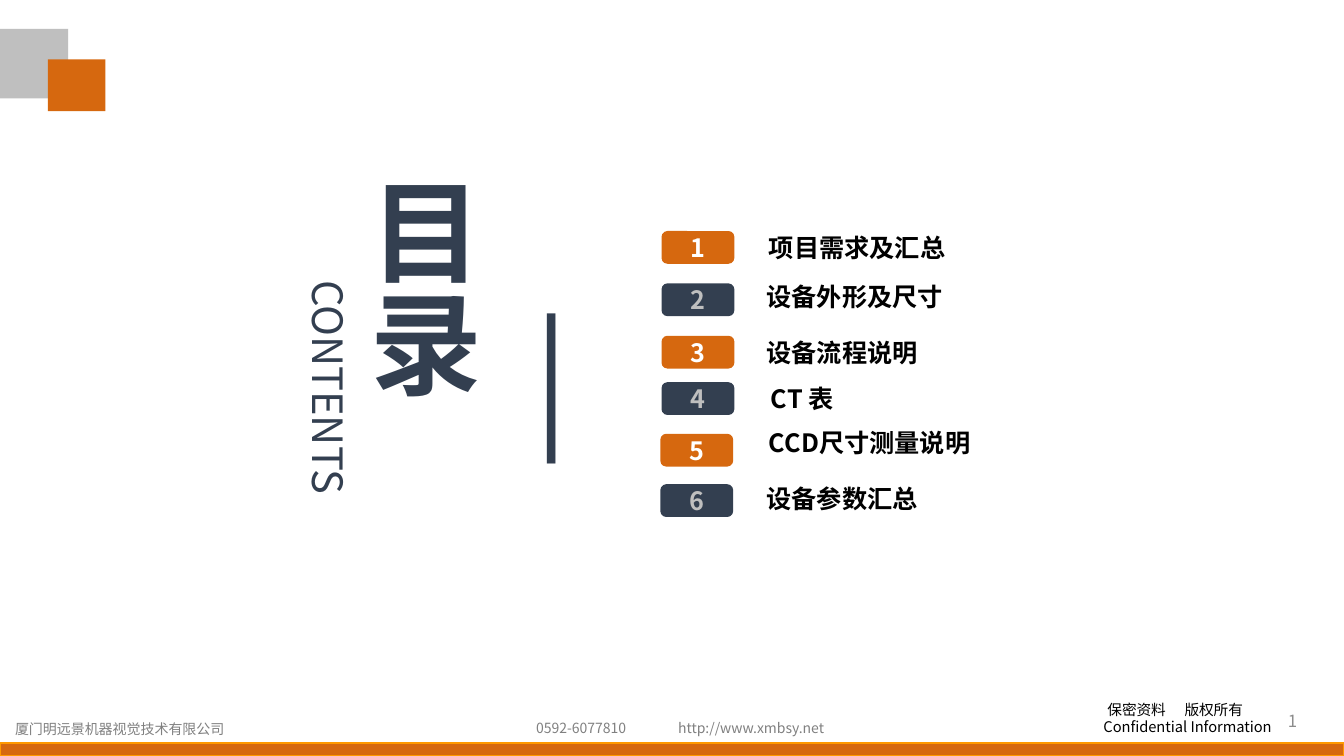
from lxml import etree
from pptx import Presentation
from pptx import util as u
from pptx.dml.color import RGBColor
from pptx.enum import shapes, text
from pptx.oxml.ns import qn

FONT = "Noto Sans CJK SC"
HUES = {"rust": "D6680F", "gold": "FF9900", "navy": "333F50", "ash": "BFBFBF",
        "gray": "808080", "mist": "8C8C8C", "black": "000000", "white": "FFFFFF"}
KIND = shapes.MSO_SHAPE
SIDE = text.PP_ALIGN

deck = Presentation()
deck.slide_width, deck.slide_height = u.Cm(33.87), u.Cm(19.05)
slide = deck.slides.add_slide(deck.slide_layouts[6])


def draw(kind, spot, fill, edge=None):
    form = slide.shapes.add_shape(kind, *map(u.Cm, spot))
    form.shadow.inherit = False
    form.fill.solid()
    form.fill.fore_color.rgb = RGBColor.from_string(HUES[fill])
    if edge:
        form.line.color.rgb = RGBColor.from_string(HUES[edge])
        form.line.width = u.Pt(1)
    else:
        form.line.fill.background()
    return form


def write(host, lines, size, hue, bold=False, side=SIDE.LEFT):
    if isinstance(host, tuple):
        host = slide.shapes.add_textbox(*map(u.Cm, host))
    frame = host.text_frame
    frame.word_wrap = True
    for i, line in enumerate(lines):
        para = frame.add_paragraph() if i else frame.paragraphs[0]
        para.alignment = side
        for part in line:
            run = para.add_run()
            run.text = part
            run.font.size = u.Pt(size)
            run.font.bold = bold
            run.font.name = FONT
            run.font.color.rgb = RGBColor.from_string(HUES[hue])
            etree.SubElement(run.font._element, qn("a:ea")).set("typeface", FONT)
    return host


draw(KIND.RECTANGLE, (0, 18.72, 33.87, 0.33), "rust", "gold")
draw(KIND.RECTANGLE, (0, 0.73, 1.72, 1.75), "ash")
draw(KIND.RECTANGLE, (1.21, 1.5, 1.45, 1.3), "rust")

note = write((27.56, 17.53, 5.51, 1.14),
             [["保密资料", " ", "版权所有"], ["Confidential Information"]], 10.5, "black")
first = note.text_frame.paragraphs[0]
props = first._p.get_or_add_pPr()
props.set("marL", str(u.Cm(0.1)))
props.set("indent", "0")
first.runs[1].font._element.set("spc", "1100")

for left, top, width, words in [
    (0.13, 18.03, 5.97, "厦门明远景机器视觉技术有限公司"),
    (13.26, 18.01, 2.79, "0592-6077810"),
    (16.84, 18.01, 4.24, "http://www.xmbsy.net"),
]:
    write((left, top, width, 0.69), [[words]], 10, "gray")

title = write((8.94, 4.45, 3.4, 9.96), [["目录"]], 79.9, "navy", True, SIDE.CENTER)
title.text_frame.vertical_anchor = text.MSO_ANCHOR.MIDDLE
title.text_frame._txBody.bodyPr.set("vert", "eaVert")
label = write((3.96, 9.12, 8.66, 1.27), [["CONTENTS"]], 29.8, "navy", False, SIDE.CENTER)
label.rotation = 90
for box in (title, label):
    frame = box.text_frame
    frame.margin_left = frame.margin_right = frame.margin_top = frame.margin_bottom = 0

bar = write((13.2, 7.23, 1.3, 4.37), [["|"]], 96, "navy")
bar.text_frame.word_wrap = False

topics = [
    (16.69, 5.84, 19.13, 5.72, "项目需求及汇总"),
    (16.69, 7.16, 19.07, 6.96, "设备外形及尺寸"),
    (16.69, 8.48, 19.07, 8.38, "设备流程说明"),
    (16.69, 9.65, 19.18, 9.53, "CT 表"),
    (16.66, 10.95, 19.13, 10.64, "CCD尺寸测量说明"),
    (16.66, 12.22, 19.07, 12.05, "设备参数汇总"),
]
for num, (x, y, left, top, words) in enumerate(topics, 1):
    fill, ink = ("rust", "white") if num % 2 else ("navy", "ash")
    pill = draw(KIND.ROUNDED_RECTANGLE, (x, y, 1.8, 0.79), fill, fill)
    pill.text_frame.vertical_anchor = text.MSO_ANCHOR.MIDDLE
    write(pill, [[str(num)]], 18, ink, True, SIDE.CENTER)
    write((left, top, 6.4, 1.02), [[words]], 18, "black", True)

page = write((25.32, 17.65, 7.62, 1.02), [["1"]], 12, "mist", False, SIDE.RIGHT)
page.text_frame.vertical_anchor = text.MSO_ANCHOR.MIDDLE

deck.save("out.pptx")
